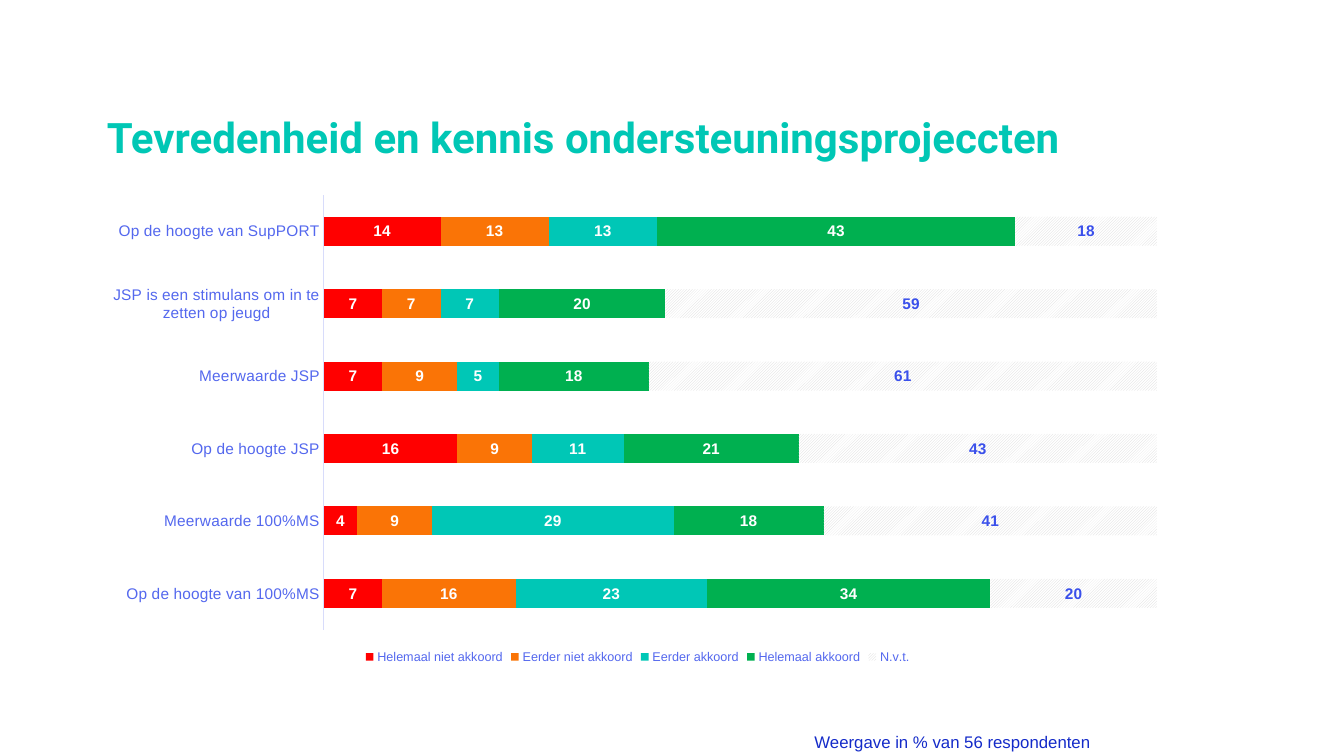
import pptx
import pptx.chart.data
import pptx.dml.color
import pptx.enum.chart
import pptx.enum.dml
import pptx.enum.text
import pptx.oxml
import pptx.util
from pptx.util import Inches

COLORS = {
    "title": "00C7B5", "note": "142BC9", "axis_text": "5468EE",
    "axis_line": "D8DCFB", "white": "FFFFFF", "red": "FF0000",
    "orange": "FA7406", "teal": "00C7B6", "green": "00B050",
    "hatch": "D9D9D9", "na_label": "3A50EB",
}


def color(name):
    return pptx.dml.color.RGBColor.from_string(COLORS[name])


def style_font(font, size, color_name, bold=False, family="Arial"):
    font.size = pptx.util.Pt(size)
    font.name = family
    font.bold = bold
    font.color.rgb = color(color_name)


deck = pptx.Presentation()
deck.slide_width = Inches(13.33)
deck.slide_height = Inches(7.5)
page = deck.slides.add_slide(deck.slide_layouts[5])

# Title
title = page.shapes.title
title.left, title.top = Inches(0.96), Inches(0.58)
title.width, title.height = Inches(10.16), Inches(1.08)
frame = title.text_frame
frame.text = "Tevredenheid en kennis ondersteuningsprojeccten"
frame.auto_size = pptx.enum.text.MSO_AUTO_SIZE.NONE
frame.vertical_anchor = pptx.enum.text.MSO_ANCHOR.BOTTOM
para = frame.paragraphs[0]
para.alignment = pptx.enum.text.PP_ALIGN.LEFT
para.line_spacing = 0.9
style_font(para.runs[0].font, 30, "title", True, "Roboto")

# Survey answers, with the categories listed from bottom to top
data = pptx.chart.data.CategoryChartData(number_format="0")
data.categories = [
    "Op de hoogte van 100%MS", "Meerwaarde 100%MS", "Op de hoogte JSP",
    "Meerwaarde JSP", "JSP is een stimulans om in te zetten op jeugd",
    "Op de hoogte van SupPORT",
]
answers = [
    ("Helemaal niet akkoord", "red", [7, 4, 16, 7, 7, 14]),
    ("Eerder niet akkoord", "orange", [16, 9, 9, 9, 7, 13]),
    ("Eerder akkoord", "teal", [23, 29, 11, 5, 7, 13]),
    ("Helemaal akkoord", "green", [34, 18, 21, 18, 20, 43]),
    ("N.v.t.", "hatch", [20, 41, 43, 61, 59, 18]),
]
for name, fill_name, values in answers:
    data.add_series(name, values)

# Stacked bar chart
chart = page.shapes.add_chart(
    pptx.enum.chart.XL_CHART_TYPE.BAR_STACKED,
    Inches(0.96), Inches(1.84), Inches(10.73), Inches(4.79), data).chart
style_font(chart.font, 10, "note")
chart.has_title = False
chart.has_legend = True
chart.legend.position = pptx.enum.chart.XL_LEGEND_POSITION.BOTTOM
chart.legend.include_in_layout = False
style_font(chart.legend.font, 9, "axis_text")

# Axes
category_axis = chart.category_axis
category_axis.major_tick_mark = pptx.enum.chart.XL_TICK_MARK.NONE
category_axis.format.line.color.rgb = color("axis_line")
category_axis.format.line.width = pptx.util.Pt(0.75)
style_font(category_axis.tick_labels.font, 11, "axis_text")
value_axis = chart.value_axis
value_axis.minimum_scale = 0
value_axis.maximum_scale = 100
value_axis.has_major_gridlines = False
value_axis.visible = False

# Bars and their labels
plot = chart.plots[0]
plot.gap_width = 150
plot.overlap = 100
plot.vary_by_categories = False
for series, (name, fill_name, values) in zip(plot.series, answers):
    fill = series.format.fill
    if fill_name == "hatch":
        fill.patterned()
        fill.pattern = pptx.enum.dml.MSO_PATTERN.LIGHT_UPWARD_DIAGONAL
        fill.fore_color.rgb = color("hatch")
        fill.back_color.rgb = color("white")
    else:
        fill.solid()
        fill.fore_color.rgb = color(fill_name)
    labels = series.data_labels
    labels.show_value = True
    labels.number_format = "0"
    labels.number_format_is_linked = False
    labels.position = pptx.enum.chart.XL_LABEL_POSITION.CENTER
    style_font(labels.font, 11,
               "na_label" if fill_name == "hatch" else "white", True)

# Plot area position as fractions of the chart
plot_area = plot._element.getparent()
for old_layout in plot_area.findall(pptx.oxml.ns.qn("c:layout")):
    plot_area.remove(old_layout)
plot_area.insert(0, pptx.oxml.parse_xml(
    "<c:layout %s><c:manualLayout><c:layoutTarget val='inner'/>"
    "<c:xMode val='edge'/><c:yMode val='edge'/><c:x val='0.21'/>"
    "<c:y val='0.02'/><c:w val='0.77'/><c:h val='0.9'/>"
    "</c:manualLayout></c:layout>" % pptx.oxml.ns.nsdecls("c")))

# Note on the respondents
note = page.shapes.add_textbox(
    Inches(7.98), Inches(7.21), Inches(2.96), Inches(0.3))
note.text_frame.word_wrap = False
note.text_frame.auto_size = pptx.enum.text.MSO_AUTO_SIZE.SHAPE_TO_FIT_TEXT
note.text_frame.text = "Weergave in % van 56 respondenten"
style_font(note.text_frame.paragraphs[0].runs[0].font, 12, "note")

deck.save("out.pptx")
